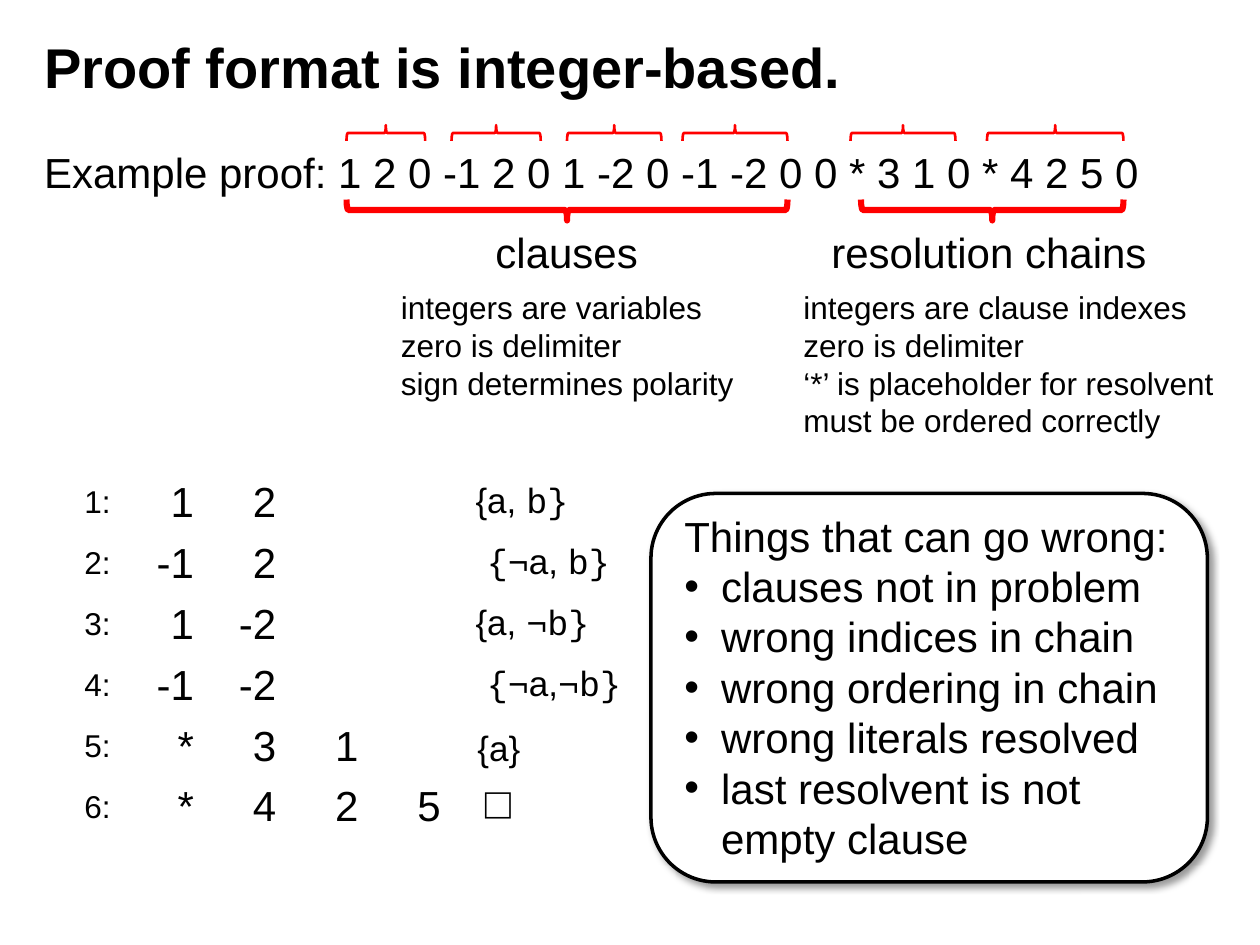
import pptx
import pptx.util
import pptx.dml.color
import pptx.enum.shapes
import pptx.enum.text
import pptx.oxml
import pptx.oxml.ns

Pt = pptx.util.Pt
Kind = pptx.enum.shapes.MSO_SHAPE
Anchor = pptx.enum.text.MSO_ANCHOR
Align = pptx.enum.text.PP_ALIGN
COLORS = {"ink": "000000", "paper": "FFFFFF", "mark": "FF0000"}
SANS, MONO = "Arial", "Courier New"


def color(name):
    return pptx.dml.color.RGBColor.from_string(COLORS[name])


def xml(body):
    ns = pptx.oxml.ns.nsdecls("a")
    return pptx.oxml.parse_xml(body.replace(">", f" {ns}>", 1))


class Deck:
    def __init__(self):
        self.prs = pptx.Presentation()
        self.prs.slide_width, self.prs.slide_height = Pt(720), Pt(540)
        self.slide = self.prs.slides.add_slide(self.prs.slide_layouts[1])
        self.shapes = self.slide.shapes

    def run(self, para, text, size, font=SANS, bold=False):
        run = para.add_run()
        run.text = text
        run.font.size, run.font.name, run.font.bold = Pt(size), font, bold
        run.font.color.rgb = color("ink")

    def holder(self, shape, box, text, size, anchor, bold=False):
        shape.left, shape.top, shape.width, shape.height = map(Pt, box)
        frame = shape.text_frame
        frame.vertical_anchor = anchor
        para = frame.paragraphs[0]
        props = para._p.get_or_add_pPr()
        props.set("marL", "0")
        props.set("indent", "0")
        props.append(xml("<a:buNone></a:buNone>"))
        para.alignment, para.space_before = Align.LEFT, Pt(0)
        self.run(para, text, size, bold=bold)

    def text(self, box, lines, size, bullets=()):
        frame = self.shapes.add_textbox(*map(Pt, box)).text_frame
        frame.word_wrap = False
        for i, line in enumerate([*lines, *bullets]):
            para = frame.add_paragraph() if i else frame.paragraphs[0]
            if i >= len(lines):
                props = para._p.get_or_add_pPr()
                props.set("marL", str(Pt(21)))
                props.set("indent", str(Pt(-21)))
                props.append(xml('<a:buFont typeface="Arial"></a:buFont>'))
                props.append(xml('<a:buChar char="•"></a:buChar>'))
            for j, part in enumerate(line.split("\n")):
                if j:
                    para.add_line_break()
                self.run(para, part, size)

    def brace(self, left, mid, span, depth, width, turn):
        # The frame is upright; turning it lays the brace along the text line
        shape = self.shapes.add_shape(
            Kind.RIGHT_BRACE, Pt(left + (span - depth) / 2),
            Pt(mid - span / 2), Pt(depth), Pt(span))
        shape.rotation = turn
        shape.shadow.inherit = False
        shape.fill.background()
        shape.line.color.rgb, shape.line.width = color("mark"), Pt(width)

    def panel(self, box):
        shape = self.shapes.add_shape(Kind.ROUNDED_RECTANGLE, *map(Pt, box))
        shape.fill.solid()
        shape.fill.fore_color.rgb = color("paper")
        shape.line.color.rgb, shape.line.width = color("ink"), Pt(2)
        shape._element.spPr.append(xml(
            f'<a:effectLst><a:outerShdw blurRad="{Pt(4)}" dist="{Pt(3)}" '
            f'dir="2700000"><a:srgbClr val="{COLORS["ink"]}">'
            '<a:alpha val="40000"/></a:srgbClr></a:outerShdw></a:effectLst>'))

    def cell(self, cell, runs, align):
        cell.vertical_anchor = Anchor.MIDDLE
        cell.margin_top = cell.margin_bottom = Pt(3)
        cell.fill.solid()
        cell.fill.fore_color.rgb = color("paper")
        props = cell._tc.get_or_add_tcPr()
        for i, side in enumerate("LRTB"):
            props.insert(i, xml(
                f'<a:ln{side} w="{Pt(1)}"><a:solidFill><a:srgbClr '
                f'val="{COLORS["paper"]}"/></a:solidFill></a:ln{side}>'))
        para = cell.text_frame.paragraphs[0]
        para.alignment = align
        for run in runs:
            self.run(para, *run)

    def table(self, left, top, widths, height, rows):
        frame = self.shapes.add_table(
            len(rows), len(widths), Pt(left), Pt(top),
            Pt(sum(widths)), Pt(height * len(rows)))
        table = frame.table
        table.first_row = table.horz_banding = False
        for col, width in zip(table.columns, widths):
            col.width = Pt(width)
        for r, (numbers, clause) in enumerate(rows):
            table.rows[r].height = Pt(height)
            self.cell(table.cell(r, 0), [(f"{r + 1}:", 18)], Align.LEFT)
            values = numbers.split()
            for c in range(1, len(widths) - 1):
                runs = [(values[c - 1], 24)] if c <= len(values) else []
                self.cell(table.cell(r, c), runs, Align.RIGHT)
            self.cell(table.cell(r, len(widths) - 1), clause, Align.LEFT)


def main():
    deck = Deck()

    # Title and example line
    deck.holder(deck.shapes.title, (18, 9, 696, 57),
                "Proof format is integer-based.", 32, Anchor.MIDDLE, True)
    deck.holder(deck.slide.placeholders[1], (18, 80, 690, 424),
                "Example proof: 1 2 0 -1 2 0 1 -2 0 -1 -2 0 0 * 3 1 0 * 4 2 5 0",
                24, Anchor.TOP)

    # Small braces over each clause and chain, large ones under each group
    for left, span in [(198, 45), (258, 51), (324, 54),
                       (390, 60), (486, 60), (564, 78)]:
        deck.brace(left, 76, span, 9, 1.5, 270)
    for left, span in [(198, 252), (492, 150)]:
        deck.brace(left, 120, span, 12, 3.5, 90)

    # Group names and rules
    deck.text((276, 126, 96, 36), ["clauses"], 24)
    deck.text((468, 126, 197, 36), ["resolution chains"], 24)
    deck.text((222, 161, 207, 73),
              ["integers are variables", "zero is delimiter",
               "sign determines polarity"], 18)
    deck.text((452, 161, 251, 94),
              ["integers are clause indexes", "zero is delimiter",
               "‘*’ is placeholder for resolvent",
               "must be ordered correctly"], 18)

    # Proof steps
    deck.table(41, 270, [30, 47, 47, 47, 47, 167], 34, [
        ("1 2", [(" {a, ", 20), ("b}", 20, MONO)]),
        ("-1 2", [(" {¬", 20, MONO), ("a, ", 20), ("b}", 20, MONO)]),
        ("1 -2", [(" {a, ", 20), ("¬b}", 20, MONO)]),
        ("-1 -2", [(" {¬", 20, MONO), ("a,", 20), ("¬b}", 20, MONO)]),
        ("* 3 1", [(" ", 24), ("{a}", 20)]),
        ("* 4 2 5", [("  ⃞", 20, MONO)]),
    ])

    # Pitfalls
    deck.panel((372, 282, 318, 222))
    deck.text((384, 288, 294, 211), ["Things that can go wrong:"], 24,
              ["clauses not in problem", "wrong indices in chain",
               "wrong ordering in chain", "wrong literals resolved",
               "last resolvent is not\nempty clause"])

    deck.prs.save("out.pptx")


if __name__ == "__main__":
    main()
